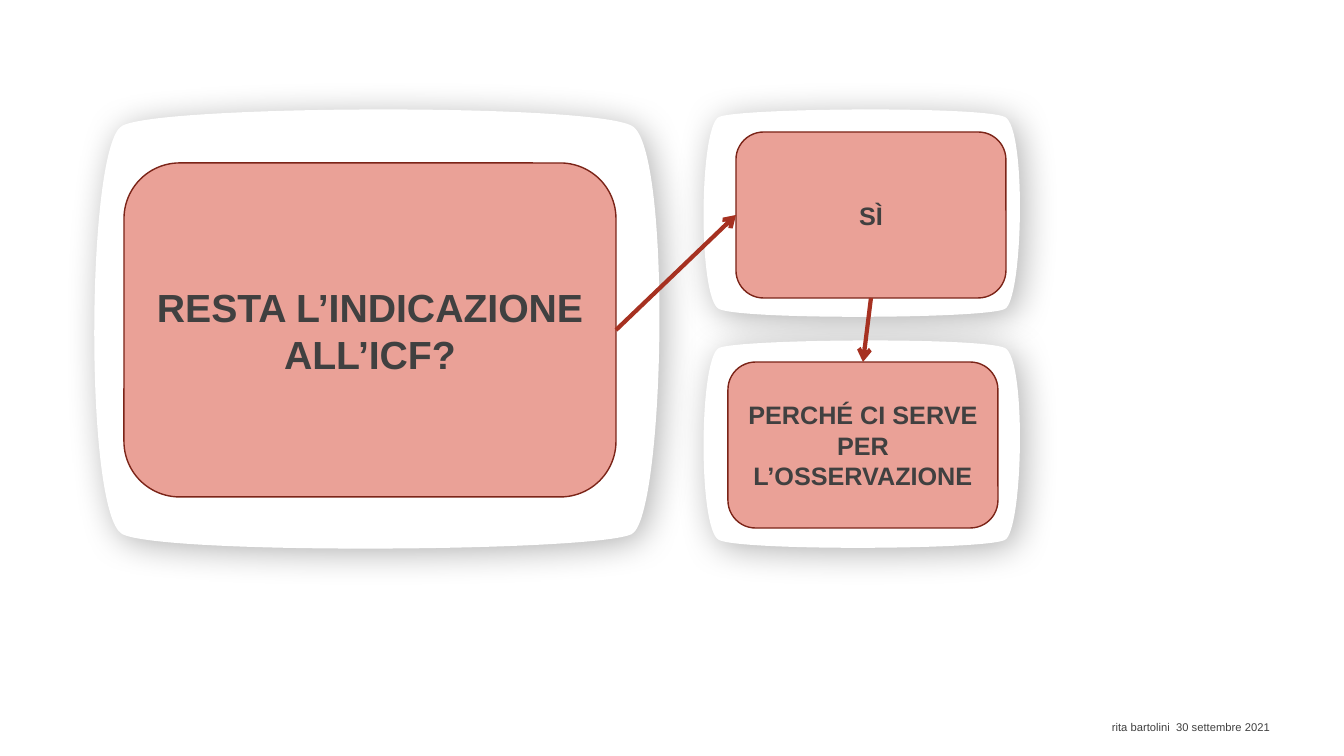
from lxml import etree
from pptx import Presentation
from pptx.dml.color import RGBColor
from pptx.enum.shapes import MSO_CONNECTOR as Connector, MSO_SHAPE as Shape
from pptx.enum.text import MSO_ANCHOR as Anchor, PP_ALIGN as Align
from pptx.oxml.ns import qn
from pptx.util import Inches, Pt

PX_PER_INCH = 100.8
TEXT = "404040"


def px(length):
    return Inches(length / PX_PER_INCH)


def colour(hex_code):
    return RGBColor.from_string(hex_code)


deck = Presentation()
deck.slide_width, deck.slide_height = px(1344), px(756)
page = deck.slides.add_slide(deck.slide_layouts[6])

# Bulging white frames: a start, then control, control, end for each side
large_frame = [(632, 126),
               (672, 148), (665, 515), (632, 534),
               (599, 552), (160, 555), (122, 534),
               (84, 512), (86, 146), (122, 126),
               (158, 105), (592, 103), (632, 126)]
small_frame = [(1005, 117),
               (1027, 128), (1023, 300), (1005, 309),
               (986, 319), (740, 320), (719, 309),
               (698, 299), (699, 127), (719, 117),
               (739, 108), (982, 106), (1005, 117)]

for outline, drop in ((large_frame, 0), (small_frame, 0), (small_frame, 231)):
    points = [(px(x), px(y + drop)) for x, y in outline]
    builder = page.shapes.build_freeform(*points[0])
    builder.add_line_segments(points[1:], close=True)
    frame = builder.convert_to_shape()
    frame.fill.solid()
    frame.fill.fore_color.rgb = colour("FFFFFF")
    frame.line.fill.background()

    # Turn every three segments into one Bezier side
    segments = list(frame.element.spPr.iter(qn("a:lnTo")))
    for first in range(0, 12, 3):
        curve = etree.Element(qn("a:cubicBezTo"))
        segments[first].addprevious(curve)
        for segment in segments[first:first + 3]:
            curve.append(segment[0])
            segment.getparent().remove(segment)

    # Soft shadow below and to the right
    frame.shadow.inherit = False
    effects = frame.element.spPr.find(qn("a:effectLst"))
    shadow = etree.SubElement(effects, qn("a:outerShdw"), blurRad=str(Pt(25)),
                              dist=str(Pt(5)), dir=str(45 * 60000), rotWithShape="0")
    black = etree.SubElement(shadow, qn("a:srgbClr"), val="000000")
    etree.SubElement(black, qn("a:alpha"), val="30000")

# Author and date
footer = page.shapes.add_textbox(px(1102), px(715), px(242), px(40))
footer.text_frame.word_wrap = True
para = footer.text_frame.paragraphs[0]
para.text = "rita bartolini  30 settembre 2021"
para.font.name, para.font.size = "Arial", Pt(8)
para.font.color.rgb = colour(TEXT)

# Question and answers
cards = []
for left, top, width, height, size, words in (
        (124, 163, 492, 334, 28, "RESTA L’INDICAZIONE ALL’ICF?"),
        (736, 132, 270, 166, 18, "SÌ"),
        (728, 362, 270, 166, 18, "PERCHÉ CI SERVE PER L’OSSERVAZIONE")):
    card = page.shapes.add_shape(Shape.ROUNDED_RECTANGLE, px(left), px(top), px(width), px(height))
    card.shadow.inherit = False
    card.fill.solid()
    card.fill.fore_color.rgb = colour("EAA197")
    card.line.color.rgb = colour("7B2418")
    card.line.width = Pt(1)
    card.text_frame.word_wrap = True
    card.text_frame.vertical_anchor = Anchor.MIDDLE
    para = card.text_frame.paragraphs[0]
    para.text = words
    para.alignment = Align.CENTER
    para.font.name, para.font.size, para.font.bold = "Arial", Pt(size), True
    para.font.color.rgb = colour(TEXT)
    cards.append(card)

# Arrows between the cards
question, answer, reason = cards
for source, source_side, target, target_side in ((question, 3, answer, 1), (answer, 2, reason, 0)):
    arrow = page.shapes.add_connector(Connector.STRAIGHT, 0, 0, 0, 0)
    arrow.begin_connect(source, source_side)
    arrow.end_connect(target, target_side)
    arrow.line.color.rgb = colour("A63121")
    arrow.line.width = Pt(3)
    line = arrow.element.spPr.find(qn("a:ln"))
    etree.SubElement(line, qn("a:tailEnd"), type="arrow")
    etree.SubElement(arrow.element.spPr, qn("a:effectLst"))

deck.save("out.pptx")
